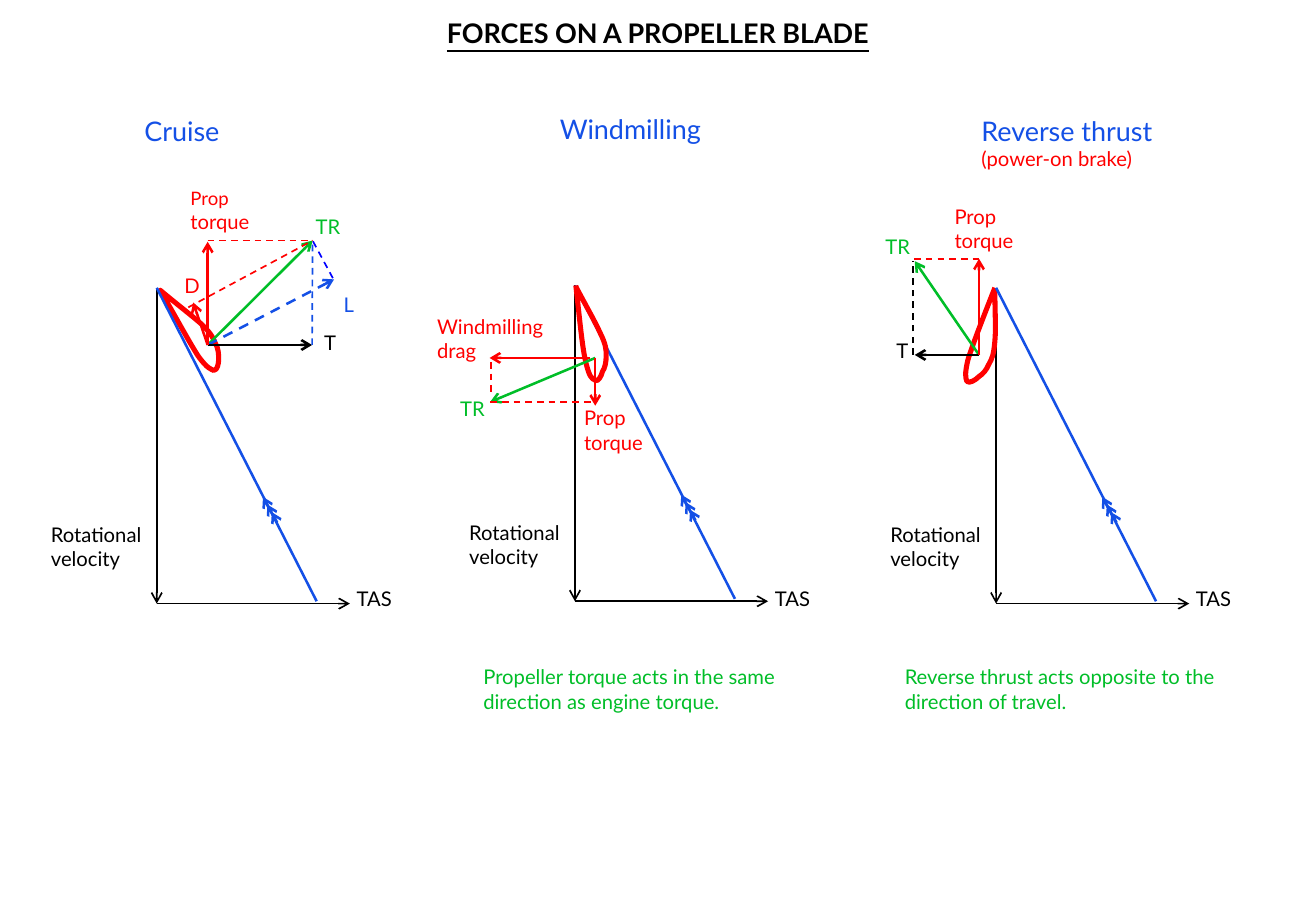
from dataclasses import dataclass

import pptx
import pptx.dml.color
import pptx.enum.dml
import pptx.enum.shapes
import pptx.enum.text
import pptx.oxml.ns
import pptx.util

Pt = pptx.util.Pt
qn = pptx.oxml.ns.qn
Point = tuple[float, float]


@dataclass(frozen=True)
class Theme:
    font: str = "Lato"
    black: str = "000000"
    blue: str = "1450E6"
    deep_blue: str = "0000FF"
    red: str = "FF0000"
    green: str = "00BE28"
    heading: float = 16
    body: float = 12
    small: float = 11
    thin: float = 1
    force: float = 1.5
    blade: float = 3


T = Theme()


@dataclass(frozen=True)
class Run:
    text: str
    color: str
    size: float = T.body
    bold: bool = False
    underline: bool = False


@dataclass(frozen=True)
class Label:
    paragraphs: list[list[Run]]
    at: Point
    size: Point = (49, 21.6)


@dataclass(frozen=True)
class Line:
    start: Point
    end: Point
    color: str
    width: float = T.force
    arrow: bool = True
    dash: bool = False


@dataclass(frozen=True)
class Panel:
    origin: Point
    blade: list[Point]  # start point, then three points per curve
    blade_over_airflow: bool
    lines: list[Line]
    labels: list[Label]


def label(text: str, color: str, x: float, y: float, w: float = 49, h: float = 21.6) -> Label:
    return Label([[Run(text, color)]], (x, y), (w, h))


def heading(text: str, x: float, y: float, *extra: list[Run]) -> Label:
    return Label([[Run(text, T.blue, T.heading)], *extra], (x, y), (181.4, 26.6))


def guide(start: Point, end: Point, color: str) -> Line:
    return Line(start, end, color, T.thin, arrow=False, dash=True)


# Panel contents
HUB_1, TIP_1 = (123.1, 204.5), (185.3, 142.6)
HUB_2, TIP_2 = (352.8, 212.2), (290.5, 238.3)
HUB_3, TIP_3 = (580.3, 210.4), (541.8, 153.4)

CRUISE = Panel(
    (92.9, 170.6),
    [(95, 172.1), (103.7, 187.2), (112.3, 203), (117.4, 211), (123.1, 218.9),
     (125.3, 218.9), (126.7, 219.6), (128.9, 219.6), (129.6, 215.3), (129.6, 213.1),
     (129.6, 210.2), (129.6, 206.6), (127.4, 203), (126, 199.4), (124.6, 197.3),
     (119.5, 192.2), (113.8, 187.2), (104.4, 180), (95, 172.1)],
    False,
    [Line(HUB_1, TIP_1, T.green),
     Line(HUB_1, (114.5, 179.3), T.red),
     Line(HUB_1, (198, 165.6), T.blue, dash=True),
     guide((111.6, 182.2), TIP_1, T.red),
     guide((197.3, 164.9), TIP_1, T.deep_blue),
     Line(HUB_1, (185, 204.5), T.black),
     guide((185, 204.5), TIP_1, T.blue),
     Line(HUB_1, (123.1, 143.3), T.red),
     guide((123.1, 142.6), TIP_1, T.red)],
    [heading("Cruise", 78.5, 64.1),
     label("L", T.blue, 196.6, 169.9, 23),
     label("TR", T.green, 180, 123.8),
     label("D", T.red, 102.2, 158.4),
     label("T", T.black, 185, 192.2),
     Label([[Run("Prop ", T.red, T.small), Run("torque", T.red)]], (105.8, 107.3), (54.7, 35.3))],
)
WINDMILLING = Panel(
    (340.8, 169.2),
    [(341.3, 169.2), (343.4, 187.2), (344.9, 204.5), (347, 213.8), (349.2, 223.2),
     (350.6, 224.6), (352.8, 225.4), (354.2, 226.8), (356.4, 223.2), (357.1, 220.3),
     (358.6, 218.2), (359.3, 214.6), (359.3, 211), (359.3, 207.4), (359.3, 204.5),
     (355.7, 197.3), (352.8, 190.8), (347, 180.7), (341.3, 169.9)],
    True,
    [Line(HUB_2, TIP_2, T.green),
     Line(HUB_2, (352.8, 240.5), T.red),
     guide(TIP_2, (352.8, 238.3), T.red),
     Line((349.9, 212.2), (290.2, 212.2), T.red),
     guide((290.9, 214.6), (290.9, 232.6), T.red)],
    [heading("Windmilling", 324.7, 63.4),
     label("TR", T.green, 265.7, 231.1),
     label("Windmilling drag", T.red, 252, 182.9, 84, 36),
     label("Prop torque", T.red, 339.1, 236.9, 54.7, 36),
     label("Propeller torque acts in the same direction as engine torque.",
           T.green, 279.4, 390.4, 206.6, 36)],
)
REVERSE = Panel(
    (590.4, 170.6),
    [(589.7, 170.6), (583.2, 187.2), (576.7, 203.8), (573.8, 213.1), (571.7, 221.8),
     (572.4, 223.9), (573.1, 226.1), (574.6, 227.5), (578.2, 225.4), (580.3, 223.2),
     (582.5, 221.8), (584.6, 219.6), (586.1, 216), (588.2, 212.4), (589, 210.2),
     (589.7, 202.3), (590.4, 195.1), (589.7, 183.6), (589.7, 171.4)],
    False,
    [Line(HUB_3, (542.2, 154.8), T.green),
     Line(HUB_3, (542.2, 210.4), T.black),
     Line(HUB_3, (580.3, 153.4), T.red),
     guide(TIP_3, (580.3, 153.4), T.red),
     guide((541.2, 210.4), (541.2, 154.8), T.black)],
    [heading("Reverse thrust", 574.6, 64.1, [Run("(power-on brake)", T.red)]),
     label("TR", T.green, 517.7, 135.4),
     label("T", T.black, 524.2, 197.3),
     label("Prop torque", T.red, 558.7, 117.4, 54.7, 36),
     label("Reverse thrust acts opposite to the direction of travel.",
           T.green, 529.2, 390.4, 208.8, 36)],
)


# Drawing functions
def rgb(color: str) -> pptx.dml.color.RGBColor:
    return pptx.dml.color.RGBColor.from_string(color)


def write(tf, paragraphs: list[list[Run]]) -> None:
    tf.word_wrap = True
    tf.auto_size = pptx.enum.text.MSO_AUTO_SIZE.NONE
    tf.vertical_anchor = pptx.enum.text.MSO_ANCHOR.TOP
    for i, runs in enumerate(paragraphs):
        p = tf.add_paragraph() if i else tf.paragraphs[0]
        for run in runs:
            r = p.add_run()
            r.text = run.text
            r.font.name, r.font.size = T.font, Pt(run.size)
            r.font.bold, r.font.underline = run.bold, run.underline
            r.font.color.rgb = rgb(run.color)


def draw_label(s, item: Label) -> None:
    sp = s.shapes.add_textbox(*map(Pt, item.at + item.size))
    write(sp.text_frame, item.paragraphs)


def draw_line(s, line: Line) -> None:
    sp = s.shapes.add_connector(
        pptx.enum.shapes.MSO_CONNECTOR.STRAIGHT, *map(Pt, line.start + line.end))
    sp.line.color.rgb = rgb(line.color)
    sp.line.width = Pt(line.width)
    if line.dash:
        sp.line.dash_style = pptx.enum.dml.MSO_LINE.DASH
    props = sp._element.spPr
    if line.arrow:
        ln = props.find(qn("a:ln"))
        ln.append(ln.makeelement(qn("a:tailEnd"), {"type": "arrow"}))
    props.append(props.makeelement(qn("a:effectLst"), {}))


def draw_blade(s, points: list[Point]) -> None:
    start, *rest = [(Pt(x), Pt(y)) for x, y in points]
    builder = s.shapes.build_freeform(*start, scale=1.0)
    builder.add_line_segments(rest, close=False)
    sp = builder.convert_to_shape()
    sp.shadow.inherit = False
    sp.fill.background()
    sp.line.color.rgb = rgb(T.red)
    sp.line.width = Pt(T.blade)
    # Join each three points into one Bézier curve
    segments = list(sp._element.iter(qn("a:lnTo")))
    for i in range(0, len(segments), 3):
        curve = segments[i].makeelement(qn("a:cubicBezTo"), {})
        segments[i].addprevious(curve)
        for segment in segments[i:i + 3]:
            curve.append(segment[0])
            segment.getparent().remove(segment)


def draw_panel(s, panel: Panel) -> None:
    x, y = panel.origin
    corner = (x, y + 187.2)
    # Velocity triangle and blade
    draw_line(s, Line(panel.origin, corner, T.black, T.thin))
    draw_line(s, Line(corner, (x + 114.5, y + 187.2), T.black, T.thin))
    airflow = Line(panel.origin, (x + 94.8, y + 185.8), T.blue, arrow=False)
    if panel.blade_over_airflow:
        draw_line(s, airflow)
        draw_blade(s, panel.blade)
    else:
        draw_blade(s, panel.blade)
        draw_line(s, airflow)
    for i in range(3):
        tip = (x + 63 + 2.6 * i, y + 124 + 4.5 * i)
        draw_line(s, Line((tip[0] + 2.2, tip[1] + 4.2), tip, T.blue))
    # Forces and labels
    for line in panel.lines:
        draw_line(s, line)
    axis_labels = [label("TAS", T.black, x + 111.4, 344.2, 54.7),
                   label("Rotational velocity", T.black, x - 69.8, y + 135.4, 77, 36)]
    for item in axis_labels + panel.labels:
        draw_label(s, item)


def main() -> None:
    prs = pptx.Presentation()
    prs.slide_width, prs.slide_height = Pt(780), Pt(540)
    s = prs.slides.add_slide(prs.slide_layouts[5])
    # Title
    title = s.shapes.title
    title.left, title.top, title.width, title.height = map(Pt, (0, 6.5, 780, 26.6))
    write(title.text_frame, [[Run("FORCES ON A PROPELLER BLADE", T.black, T.heading, True, True)]])
    title.text_frame.paragraphs[0].alignment = pptx.enum.text.PP_ALIGN.CENTER
    # Flight conditions
    for panel in (CRUISE, WINDMILLING, REVERSE):
        draw_panel(s, panel)
    prs.save("out.pptx")


if __name__ == "__main__":
    main()
